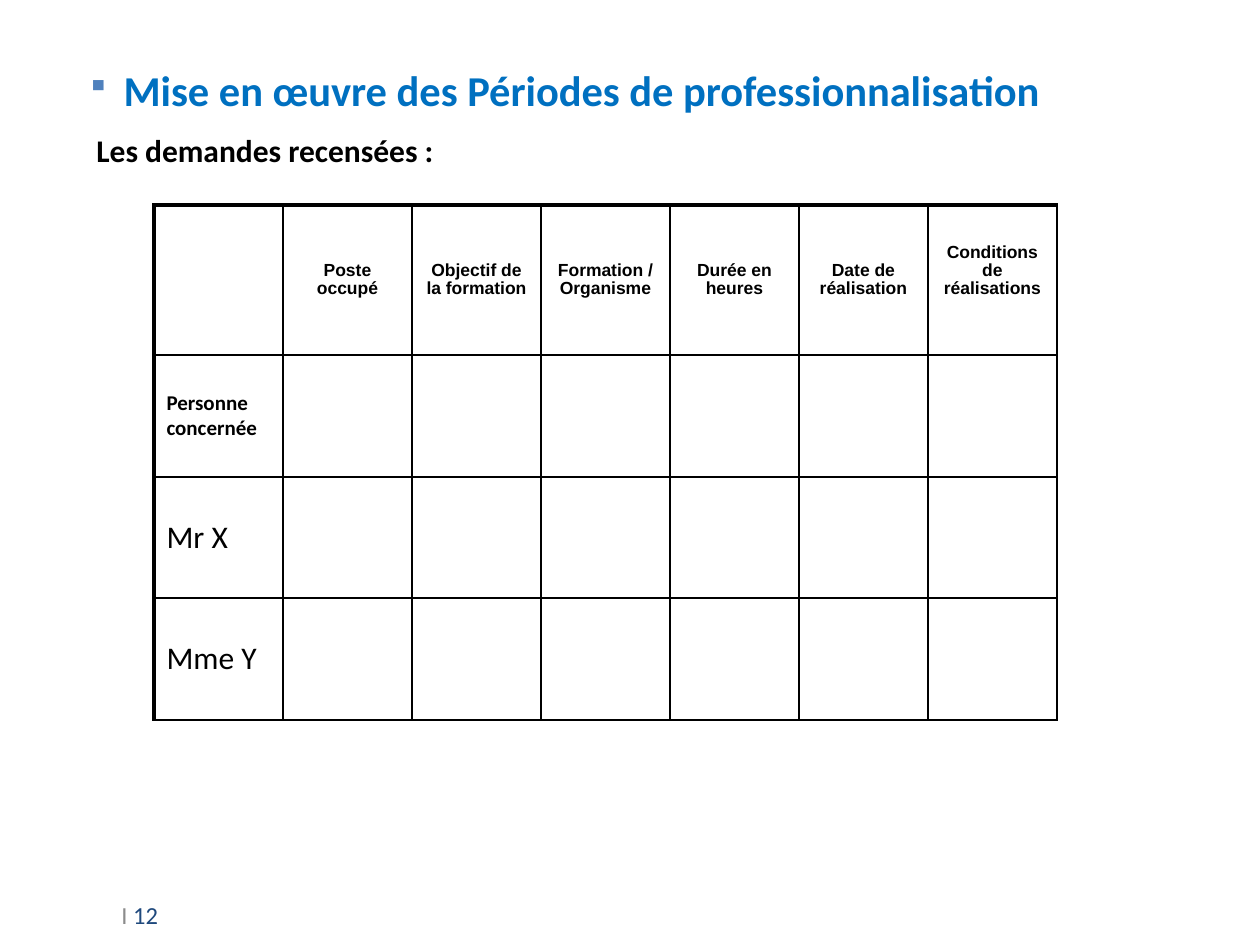
from dataclasses import dataclass

import pptx
import pptx.dml.color
import pptx.enum.text
import pptx.oxml
import pptx.oxml.ns
import pptx.util

EMU_PER_PX = 914400 / 126
MIDDLE = pptx.enum.text.MSO_ANCHOR.MIDDLE
LEFT = pptx.enum.text.PP_ALIGN.LEFT
CENTER = pptx.enum.text.PP_ALIGN.CENTER


def px(length):
    return pptx.util.Emu(round(length * EMU_PER_PX))


@dataclass(frozen=True)
class Theme:
    body_font: str = "Calibri"
    header_font: str = "Arial"
    ink: str = "000000"
    title: str = "0070C0"
    bullet: str = "4F81BD"
    muted: str = "8C8C8C"
    navy: str = "1F497D"
    title_size: float = 24.3
    text_size: int = 18
    page_size: int = 14
    label_size: int = 12
    header_size: int = 10
    thin: float = 1
    thick: float = 2.25


class SlideBuilder:
    def __init__(self, slide, theme):
        self.slide = slide
        self.theme = theme

    def style(self, font, size, color, bold=False, name=None):
        font.name = name or self.theme.body_font
        font.size = pptx.util.Pt(size)
        font.bold = bold
        font.color.rgb = pptx.dml.color.RGBColor.from_string(color)

    def element(self, tag, content="", attributes=""):
        namespace = pptx.oxml.ns.nsdecls("a")
        return pptx.oxml.parse_xml(
            f"<a:{tag} {namespace} {attributes}>{content}</a:{tag}>")

    def title(self, text, left, top, width, height, indent):
        heading = self.slide.shapes.title
        heading.left, heading.top = px(left), px(top)
        heading.width, heading.height = px(width), px(height)
        frame = heading.text_frame
        frame.text = text
        frame.vertical_anchor = MIDDLE
        frame.auto_size = pptx.enum.text.MSO_AUTO_SIZE.NONE
        paragraph = frame.paragraphs[0]
        paragraph.alignment = LEFT
        self.style(paragraph.font, self.theme.title_size, self.theme.title, True)
        # Square bullet with a hanging indent
        properties = paragraph._p.get_or_add_pPr()
        properties.set("marL", str(px(indent)))
        properties.set("indent", str(px(-indent)))
        bullet_parts = (
            self.element("buClr", f'<a:srgbClr val="{self.theme.bullet}"/>'),
            self.element("buSzPct", attributes='val="74000"'),
            self.element("buChar", attributes='char="▪"'),
        )
        for position, part in enumerate(bullet_parts):
            properties.insert(position, part)

    def text(self, runs, left, top, width, height, size, bold=False, anchor=None):
        box = self.slide.shapes.add_textbox(px(left), px(top), px(width), px(height))
        frame = box.text_frame
        frame.word_wrap = True
        frame.vertical_anchor = anchor
        for words, color in runs:
            run = frame.paragraphs[0].add_run()
            run.text = words
            self.style(run.font, size, color, bold)

    def table(self, left, top, column_width, row_heights, column_count):
        row_count = len(row_heights)
        grid = self.slide.shapes.add_table(
            row_count, column_count, px(left), px(top),
            px(column_width * column_count), px(sum(row_heights))).table
        grid.first_row = grid.horz_banding = False
        for column in grid.columns:
            column.width = px(column_width)
        for row, height in zip(grid.rows, row_heights):
            row.height = px(height)
        for r in range(row_count):
            for c in range(column_count):
                cell = grid.cell(r, c)
                self.borders(cell, thick_left=c == 0, thick_top=r == 0)
                cell.fill.background()
                cell.vertical_anchor = MIDDLE
        return grid

    def borders(self, cell, thick_left, thick_top):
        thick_sides = {"L": thick_left, "T": thick_top}
        properties = cell._tc.get_or_add_tcPr()
        for side in "LRTB":
            weight = self.theme.thick if thick_sides.get(side) else self.theme.thin
            properties.append(self.element(
                f"ln{side}",
                f'<a:solidFill><a:srgbClr val="{self.theme.ink}"/></a:solidFill>',
                f'w="{pptx.util.Pt(weight)}"'))

    def cell_text(self, cell, text, size, bold, name=None, align=LEFT, spacing=None):
        cell.text = text
        paragraph = cell.text_frame.paragraphs[0]
        paragraph.alignment = align
        paragraph.line_spacing = spacing
        self.style(paragraph.font, size, self.theme.ink, bold, name)


def main():
    presentation = pptx.Presentation()
    presentation.slide_width, presentation.slide_height = px(1260), px(945)
    theme = Theme()
    slide = presentation.slides.add_slide(presentation.slide_layouts[5])
    builder = SlideBuilder(slide, theme)

    # Page number
    builder.text([("I ", theme.muted), ("12", theme.navy)],
                 109, 882, 126, 66, theme.page_size, anchor=MIDDLE)

    # Headings
    builder.title("Mise en œuvre des Périodes de professionnalisation",
                  74, 66, 1081, 47, indent=37)
    builder.text([("Les demandes recensées :", theme.ink)],
                 84, 125, 1012, 50, theme.text_size, bold=True)

    # Table of training requests
    headers = ["Poste occupé", "Objectif de la formation", "Formation / Organisme",
               "Durée en heures", "Date de réalisation", "Conditions de réalisations"]
    people = [("Personne concernée", theme.label_size, True),
              ("Mr X", theme.text_size, False),
              ("Mme Y", theme.text_size, False)]
    requests = builder.table(154, 205, 129, [150, 122, 121, 122], len(headers) + 1)
    for column, header in enumerate(headers, start=1):
        builder.cell_text(requests.cell(0, column), header, theme.header_size, True,
                          theme.header_font, CENTER, 0.9)
    requests.cell(0, len(headers)).margin_bottom = px(24)
    for row, (person, size, bold) in enumerate(people, start=1):
        builder.cell_text(requests.cell(row, 0), person, size, bold)

    presentation.save("out.pptx")


if __name__ == "__main__":
    main()
